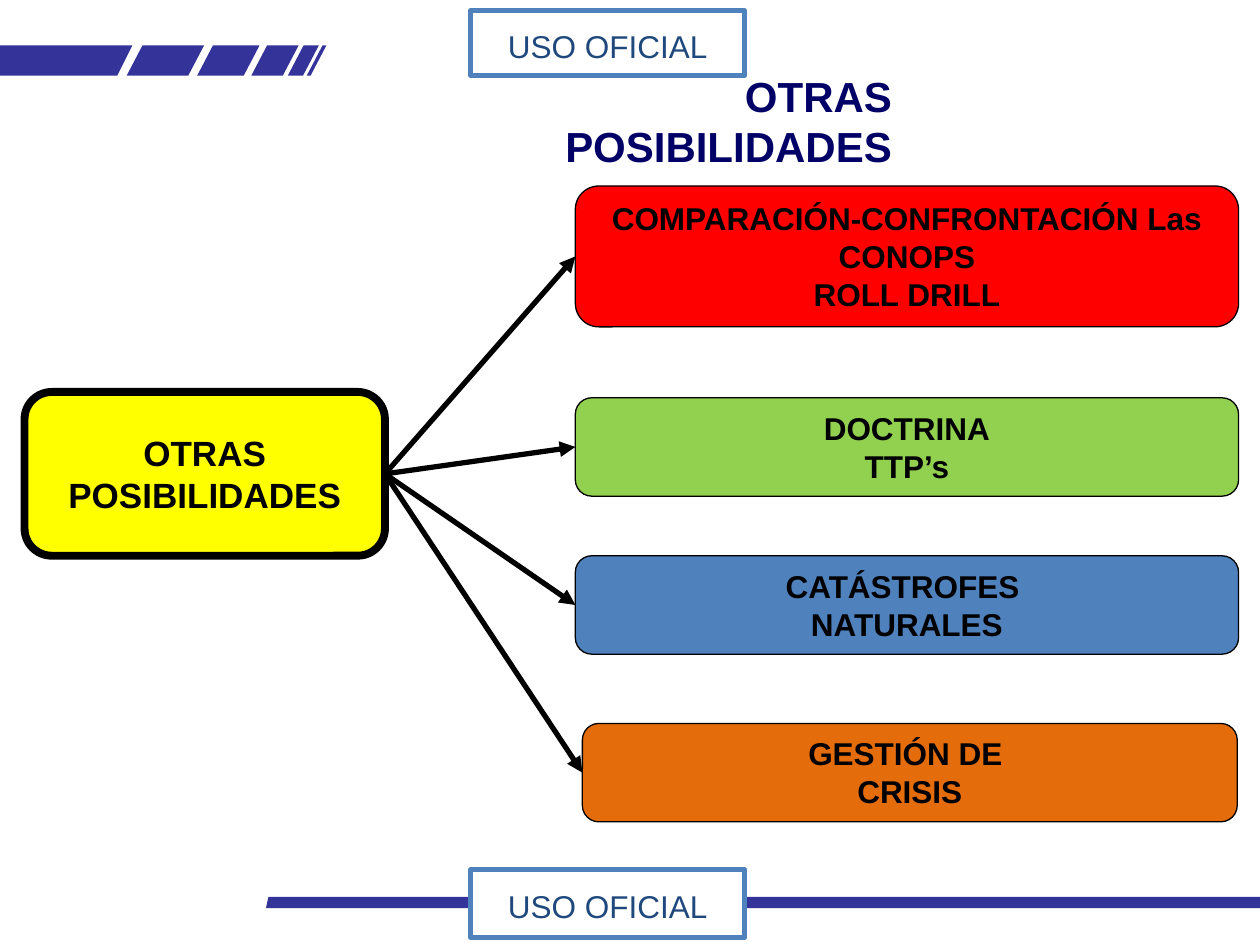
from lxml import etree
from pptx import Presentation
from pptx.dml.color import RGBColor
from pptx.enum.shapes import MSO_CONNECTOR, MSO_SHAPE
from pptx.enum.text import MSO_ANCHOR, MSO_AUTO_SIZE, PP_ALIGN
from pptx.oxml.ns import qn
from pptx.util import Pt

RECT, ROUND = MSO_SHAPE.RECTANGLE, MSO_SHAPE.ROUNDED_RECTANGLE
STRAIGHT = MSO_CONNECTOR.STRAIGHT
TOP, MIDDLE = MSO_ANCHOR.TOP, MSO_ANCHOR.MIDDLE
CENTER, RIGHT = PP_ALIGN.CENTER, PP_ALIGN.RIGHT
FIT_SHAPE, NO_FIT = MSO_AUTO_SIZE.SHAPE_TO_FIT_TEXT, MSO_AUTO_SIZE.NONE
LEFT_SITE, RIGHT_SITE = 1, 3
color = RGBColor.from_string

prs = Presentation()
prs.slide_width, prs.slide_height = Pt(720), Pt(540)
s = prs.slides.add_slide(prs.slide_layouts[5])


def write(tf, lines, size, hex_color, bold, align=CENTER):
    for i, line in enumerate(lines):
        p = tf.paragraphs[0] if i == 0 else tf.add_paragraph()
        p.text = line
        p.alignment = align
        p.font.name, p.font.size, p.font.bold = "Arial", Pt(size), bold
        p.font.color.rgb = color(hex_color)


def add_box(kind, bounds, fill, line, width, lines, size, text_color="000000",
            bold=True, anchor=MIDDLE):
    sp = s.shapes.add_shape(kind, *map(Pt, bounds))
    sp.shadow.inherit = False
    sp.fill.solid()
    sp.fill.fore_color.rgb = color(fill)
    sp.line.color.rgb = color(line)
    sp.line.width = Pt(width)
    sp.text_frame.vertical_anchor = anchor
    write(sp.text_frame, lines, size, text_color, bold)
    return sp


# Header stripes and footer bar
y1, y2, slant = 26, 43.2, 9
outlines = [[(0, y1), (75.6, y1), (67, y2), (0, y2)]]
for x1, x2 in [(81.4, 116.6), (121.7, 148.3), (152.6, 170.6),
               (173.5, 182.2), (184.3, 186.5)]:
    outlines.append([(x1, y1), (x2, y1), (x2 - slant, y2), (x1 - slant, y2)])
outlines.append([(153.4, 512.6), (720, 512.6), (720, 519), (152, 519)])
for outline in outlines:
    points = [(Pt(x), Pt(y)) for x, y in outline]
    fb = s.shapes.build_freeform(*points[0])
    fb.add_line_segments(points[1:])
    sp = fb.convert_to_shape()
    sp.shadow.inherit = False
    sp.fill.solid()
    sp.fill.fore_color.rgb = color("333399")
    sp.line.fill.background()

# Classification marks
for top, height in [(497, 38.7), (6.2, 36.9)]:
    sp = add_box(RECT, (269, top, 156.5, height), "FFFFFF", "4F81BD", 3,
                 ["USO OFICIAL"], 18, "1F497D", False)
    sp.text_frame.margin_top = Pt(6.5)

# Title
title = s.shapes.title
title.left, title.top, title.width, title.height = map(Pt, (253.4, 51, 263.5, 36))
tf = title.text_frame
tf.word_wrap, tf.auto_size, tf.vertical_anchor = False, NO_FIT, MIDDLE
write(tf, ["OTRAS POSIBILIDADES"], 24, "000066", True, RIGHT)

# Source box, and options with their arrows
hub = add_box(ROUND, (14, 224, 206, 93.6), "FFFF00", "000000", 4.5,
              ["OTRAS", "POSIBILIDADES"], 20)
options = [
    ((328.8, 106.3, 379, 80.5), "FF0000",
     ["COMPARACIÓN-CONFRONTACIÓN Las", "CONOPS", "ROLL DRILL"]),
    ((328.8, 227.3, 379, 56.2), "92D050", ["DOCTRINA", "TTP’s"]),
    ((328.8, 317.6, 379, 56.2), "4F81BD", ["CATÁSTROFES ", "NATURALES"]),
    ((332.8, 413.4, 374.2, 56.2), "E46C0A", ["GESTIÓN DE ", "CRISIS"]),
]
for bounds, fill, lines in options:
    sp = add_box(ROUND, bounds, fill, "000000", 0.75, lines, 18, anchor=TOP)
    sp.text_frame.auto_size = FIT_SHAPE
    arrow = s.shapes.add_connector(STRAIGHT, 0, 0, 0, 0)
    arrow.begin_connect(hub, RIGHT_SITE)
    arrow.end_connect(sp, LEFT_SITE)
    arrow.line.color.rgb = color("000000")
    arrow.line.width = Pt(3)
    etree.SubElement(arrow.line._get_or_add_ln(), qn("a:tailEnd"), type="triangle")
    etree.SubElement(arrow._element.spPr, qn("a:effectLst"))

prs.save("out.pptx")
